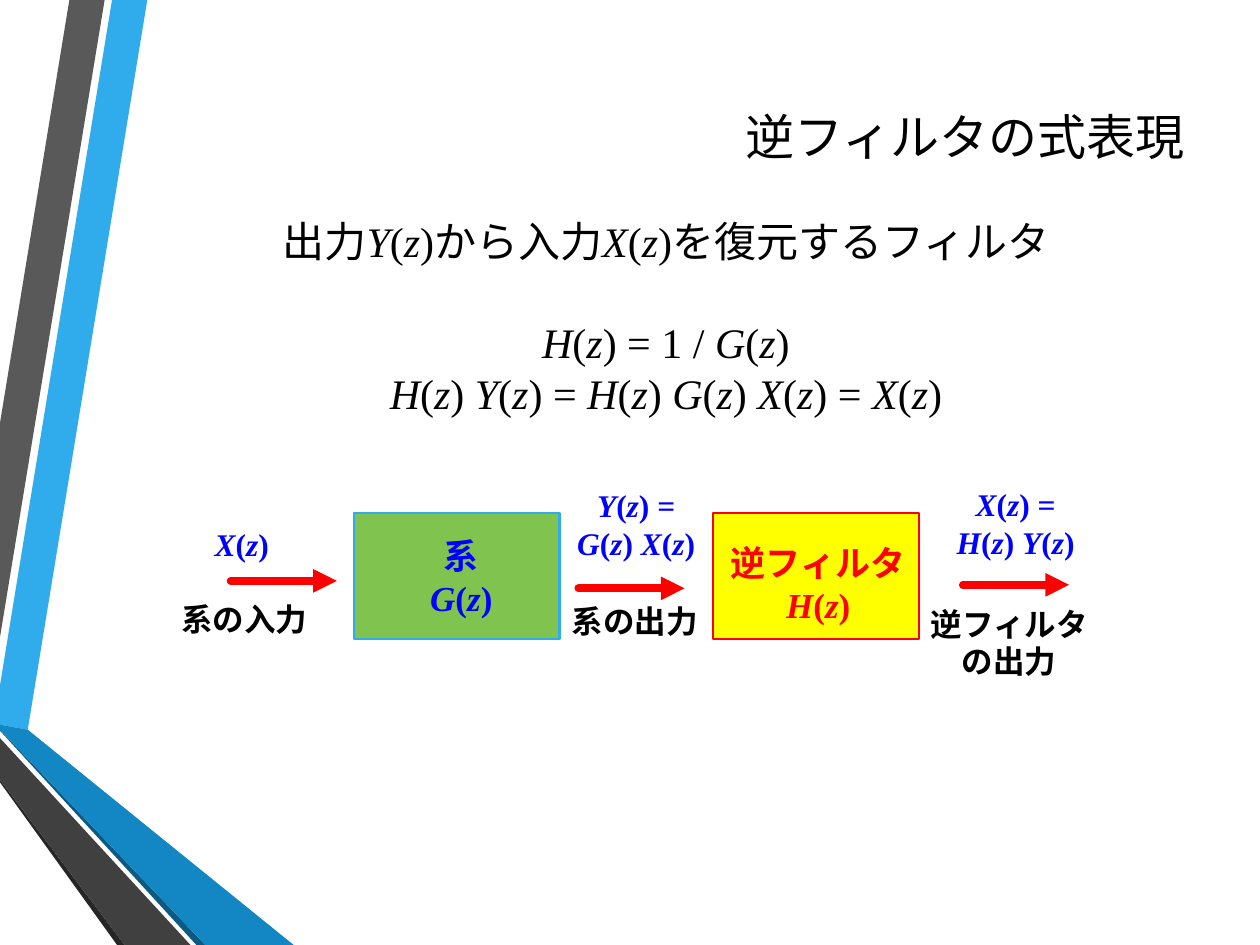
from itertools import groupby

from lxml.etree import SubElement
from pptx import Presentation
from pptx.dml.color import RGBColor
from pptx.enum.shapes import MSO_CONNECTOR, MSO_SHAPE
from pptx.enum.text import MSO_ANCHOR, PP_ALIGN
from pptx.oxml.ns import qn
from pptx.util import Cm, Pt

COLORS = {
    "black": "000000", "blue": "0000FF", "red": "FF0000", "yellow": "FFFF00",
    "green": "80C34F", "sky": "30ACEC", "ocean": "1287C3", "deep": "0C5A82",
    "gray": "595959", "charcoal": "404040", "soot": "262626",
}
WIDTH, HEIGHT = 25.4, 19.05
BODY_FONT = "Times New Roman"


def is_variable(char):
    return char.isascii() and char.isalpha()


def set_all(target, values):
    for name, value in values.items():
        setattr(target, name, value)


class Painter:
    """Draws on one slide; positions are in centimetres."""

    def __init__(self, slide):
        self.shapes = slide.shapes

    def color(self, name):
        return RGBColor.from_string(COLORS[name])

    def paint(self, shape, fill, line=None):
        shape.shadow.inherit = False
        shape.fill.solid()
        shape.fill.fore_color.rgb = self.color(fill)
        if line:
            shape.line.color.rgb = self.color(line)
            shape.line.width = Pt(1.25)
        else:
            shape.line.fill.background()

    def ribbon(self, fill, points):
        start, *rest = [(Cm(x), Cm(y)) for x, y in points]
        builder = self.shapes.build_freeform(*start, scale=1.0)
        builder.add_line_segments(rest, close=True)
        self.paint(builder.convert_to_shape(), fill)

    def block(self, left, top, width, height, fill, line):
        box = self.shapes.add_shape(
            MSO_SHAPE.RECTANGLE, Cm(left), Cm(top), Cm(width), Cm(height))
        self.paint(box, fill, line)

    def arrow(self, left, top, length):
        arrow = self.shapes.add_connector(
            MSO_CONNECTOR.STRAIGHT, Cm(left), Cm(top), Cm(left + length), Cm(top))
        arrow.line.color.rgb = self.color("red")
        arrow.line.width = Pt(4.5)
        properties = arrow.element.spPr
        outline = properties.find(qn("a:ln"))
        outline.set("cap", "rnd")
        SubElement(outline, qn("a:tailEnd"), type="triangle")
        SubElement(properties, qn("a:effectLst"))

    def text(self, left, top, width, height, lines, size, color="black",
             font=BODY_FONT, bold=False, align=PP_ALIGN.CENTER, gaps=None, **frame):
        """Writes lines with variables in italics; gaps maps a line to its space before."""
        box = self.shapes.add_textbox(Cm(left), Cm(top), Cm(width), Cm(height))
        set_all(box.text_frame, {"word_wrap": True, **frame})
        for index, line in enumerate(lines):
            paragraph = (box.text_frame.add_paragraph() if index
                         else box.text_frame.paragraphs[0])
            paragraph.alignment = align
            paragraph.space_before = Pt((gaps or {}).get(index, 0))
            for italic, chars in groupby(line, is_variable):
                run = paragraph.add_run()
                run.text = "".join(chars)
                set_all(run.font, {"name": font, "size": Pt(size),
                                   "bold": bold, "italic": italic})
                run.font.color.rgb = self.color(color)

    def label(self, left, top, lines, color="black", size=18, width=3.45):
        height = 0.042 * size * len(lines)
        self.text(left, top, width, height, lines, size, color, bold=True,
                  margin_left=0, margin_top=0, margin_right=0, margin_bottom=0)


def main():
    deck = Presentation()
    deck.slide_width, deck.slide_height = Cm(WIDTH), Cm(HEIGHT)
    painter = Painter(deck.slides.add_slide(deck.slide_layouts[6]))

    ribbons = [
        ("sky", [(0, 13.82), (0, 14.61), (0.56, 14.71), (2.97, 0), (2.26, 0)]),
        ("gray", [(2.11, 0), (1.4, 0), (0, 8.53), (0, 12.85)]),
        ("soot", [(0, 15.72), (0, 15.77), (2.36, HEIGHT), (2.51, HEIGHT)]),
        ("deep", [(0, 14.71), (0, 14.73), (3.96, HEIGHT), (4.14, HEIGHT)]),
        ("ocean", [(0, 14.71), (4.14, HEIGHT), (5.92, HEIGHT), (0.56, 14.71), (0, 14.61)]),
        ("charcoal", [(0, 15.72), (2.51, HEIGHT), (3.84, HEIGHT), (0, 14.88)]),
    ]
    for fill, points in ribbons:
        painter.ribbon(fill, points)

    painter.text(5.79, 1.27, 18.34, 2.95, ["逆フィルタの式表現"], 28, font="Calibri",
                 align=PP_ALIGN.RIGHT, vertical_anchor=MSO_ANCHOR.MIDDLE)
    painter.text(2.72, 4.22, 21.41, 4.37, [
        "出力Y(z)から入力X(z)を復元するフィルタ",
        "H(z) = 1 / G(z)",
        "H(z) Y(z) = H(z) G(z) X(z) = X(z)",
    ], 24, gaps={1: 29})

    systems = [
        (7.14, "green", "sky", (7.8, 10.77, ["系", "G(z)"], "blue")),
        (14.38, "yellow", "red", (14.68, 10.92, ["逆フィルタ", "H(z)"], "red")),
    ]
    for left, fill, line, name in systems:
        painter.block(left, 10.34, 4.14, 2.54, fill, line)
        painter.label(*name, size=20, width=3 if fill == "green" else 3.63)

    signals = [
        ((4.65, 11.71), (3.15, 10.59, ["X(z)"]), (3.2, 12.09, ["系の入力"])),
        ((11.66, 11.86), (11.1, 9.8, ["Y(z) =", "G(z) X(z)"]), (11.07, 12.14, ["系の出力"])),
        ((19.41, 11.79), (18.75, 9.78, ["X(z) =", "H(z) Y(z)"]),
         (18.62, 12.19, ["逆フィルタの出力"])),
    ]
    for start, formula, caption in signals:
        painter.arrow(*start, 2.14)
        painter.label(*formula, color="blue")
        painter.label(*caption)

    deck.save("out.pptx")


if __name__ == "__main__":
    main()
